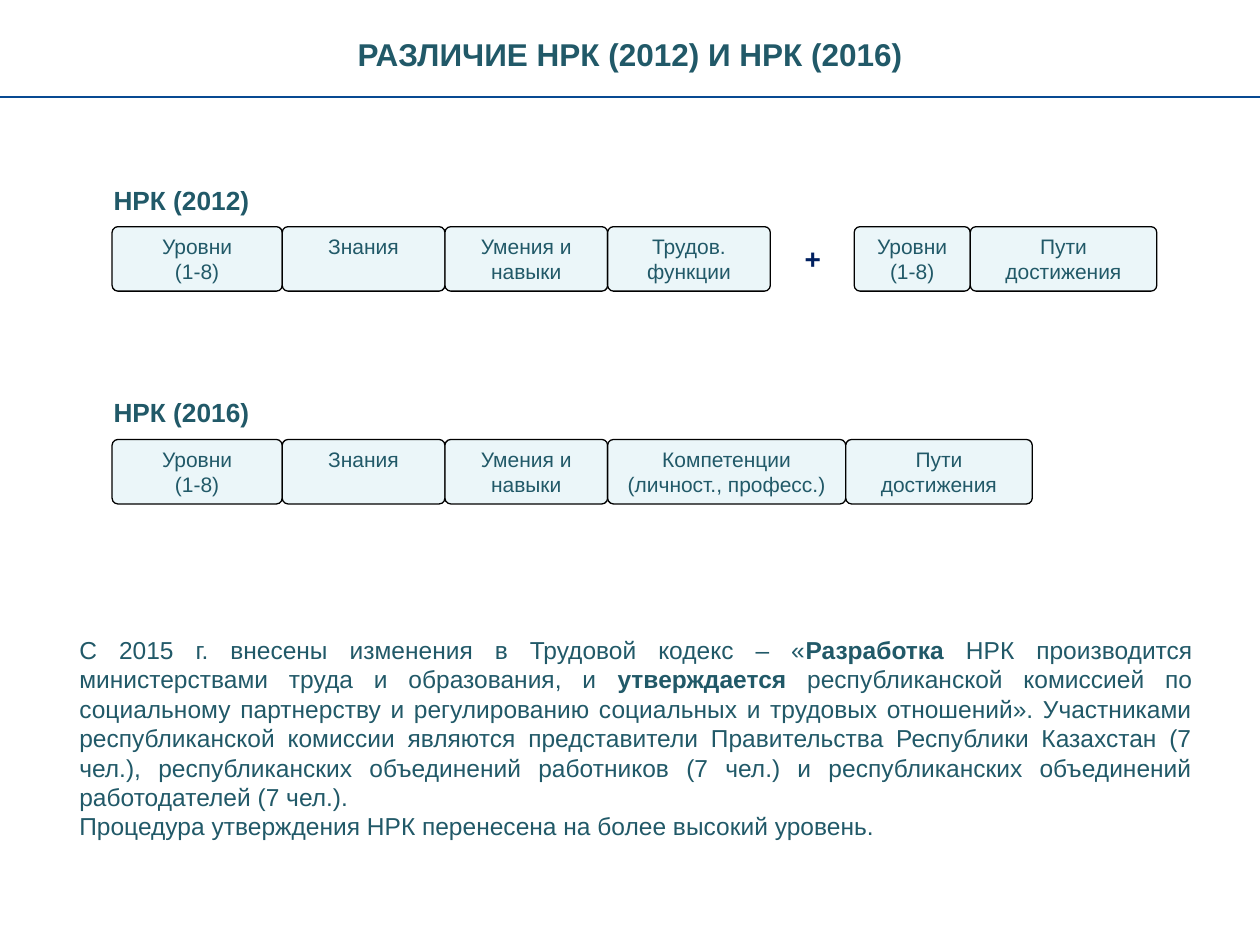
from lxml import etree
from pptx import Presentation
from pptx.dml.color import RGBColor
from pptx.enum.shapes import MSO_CONNECTOR, MSO_SHAPE
from pptx.enum.text import MSO_ANCHOR, PP_ALIGN
from pptx.oxml.ns import qn
from pptx.util import Cm, Pt

TEAL = RGBColor(0x21, 0x59, 0x68)
NAVY = RGBColor(0x00, 0x20, 0x60)
BLUE = RGBColor(0x08, 0x4A, 0x92)
PALE = RGBColor(0xEB, 0xF6, 0xF9)
BLACK = RGBColor(0, 0, 0)
LEFT, CENTER, JUSTIFY = PP_ALIGN.LEFT, PP_ALIGN.CENTER, PP_ALIGN.JUSTIFY
TOP, MIDDLE = MSO_ANCHOR.TOP, MSO_ANCHOR.MIDDLE
ROUNDED = MSO_SHAPE.ROUNDED_RECTANGLE
STRAIGHT = MSO_CONNECTOR.STRAIGHT

SLIDE_WIDTH, SLIDE_HEIGHT = 25.4, 19.05
BOX_HEIGHT = 1.3
ROW_LEFT, EXTRA_LEFT = 2.26, 17.22
LEVELS, KNOWLEDGE, SKILLS = "Уровни\n(1-8)", "Знания", "Умения и навыки"
WAYS = "Пути\nдостижения"
COMMON_BOXES = [(LEVELS, 3.43), (KNOWLEDGE, 3.28), (SKILLS, 3.28)]
BOXES_2012 = COMMON_BOXES + [("Трудов.\nфункции", 3.28)]
EXTRA_2012 = [(LEVELS, 2.34), (WAYS, 3.76)]
BOXES_2016 = COMMON_BOXES + [("Компетенции\n(личност., професс.)", 4.8), (WAYS, 3.76)]

# Each paragraph is a list of (text, bold) runs
BODY = [
    [
        ("С 2015 г. внесены изменения в Трудовой кодекс – «", False),
        ("Разработка ", True),
        ("НРК производится министерствами труда и образования, и ", False),
        ("утверждается", True),
        (" республиканской комиссией по социальному партнерству и регулированию "
         "социальных и трудовых отношений». Участниками республиканской комиссии "
         "являются представители Правительства Республики Казахстан (7 чел.), "
         "республиканских объединений работников (7 чел.) и республиканских "
         "объединений работодателей (7 чел.).", False),
    ],
    [("Процедура утверждения НРК перенесена на более высокий уровень.", False)],
]


class SlideBuilder:
    def __init__(self, slide, font="Arial", color=TEAL):
        self.slide, self.font, self.color = slide, font, color

    def fill_text(self, shape, paragraphs, size, align, anchor, margins, color=None):
        """Write lists of (text, bold) runs into a shape; margins are (sides, top and bottom)."""
        frame = shape.text_frame
        frame.word_wrap = True
        frame.vertical_anchor = anchor
        frame.margin_left = frame.margin_right = Cm(margins[0])
        frame.margin_top = frame.margin_bottom = Cm(margins[1])
        for index, runs in enumerate(paragraphs):
            paragraph = frame.add_paragraph() if index else frame.paragraphs[0]
            paragraph.alignment = align
            for text, bold in runs:
                run = paragraph.add_run()
                run.text = text
                run.font.name, run.font.size, run.font.bold = self.font, Pt(size), bold
                run.font.color.rgb = color or self.color

    def text(self, left, top, width, height, paragraphs, size, align=LEFT,
             anchor=MIDDLE, margins=(0, 0), color=None):
        box = self.slide.shapes.add_textbox(Cm(left), Cm(top), Cm(width), Cm(height))
        self.fill_text(box, paragraphs, size, align, anchor, margins, color)

    def box(self, left, top, width, text):
        shape = self.slide.shapes.add_shape(ROUNDED, Cm(left), Cm(top), Cm(width), Cm(BOX_HEIGHT))
        shape.shadow.inherit = False
        shape.adjustments[0] = 0.09
        shape.fill.solid()
        shape.fill.fore_color.rgb = PALE
        shape.line.color.rgb = BLACK
        shape.line.width = Pt(0.75)
        paragraphs = [[(line, False)] for line in text.split("\n")]
        self.fill_text(shape, paragraphs, 12, CENTER, TOP, (0.1, 0.1))

    def row(self, left, top, boxes):
        """Place boxes side by side without gaps."""
        for text, width in boxes:
            self.box(left, top, width, text)
            left += width

    def heading(self, row_top, text):
        self.text(2.29, row_top - 0.89, 3.05, 0.69, [[(text, True)]], 15)

    def rule(self, top):
        line = self.slide.shapes.add_connector(STRAIGHT, 0, Cm(top), Cm(SLIDE_WIDTH), Cm(top))
        line.line.color.rgb = BLUE
        line.line.width = Pt(1)
        etree.SubElement(line._element.spPr, qn("a:effectLst"))


def main():
    presentation = Presentation()
    presentation.slide_width, presentation.slide_height = Cm(SLIDE_WIDTH), Cm(SLIDE_HEIGHT)
    slide = presentation.slides.add_slide(presentation.slide_layouts[6])
    builder = SlideBuilder(slide)

    builder.text(0, 0.58, SLIDE_WIDTH, 1.02, [[("РАЗЛИЧИЕ НРК (2012) И НРК (2016)", True)]],
                 18, CENTER, TOP, (0.25, 0.13))
    builder.rule(1.96)

    top_2012, top_2016 = 4.57, 8.86
    builder.heading(top_2012, "НРК (2012)")
    builder.row(ROW_LEFT, top_2012, BOXES_2012)
    builder.text(15.9, top_2012 + 0.25, 0.97, 0.79, [[("+", True)]], 16, CENTER, color=NAVY)
    builder.row(EXTRA_LEFT, top_2012, EXTRA_2012)

    builder.heading(top_2016, "НРК (2016)")
    builder.row(ROW_LEFT, top_2016, BOXES_2016)

    builder.text(1.35, 12.67, 22.94, 4.45, BODY, 14, JUSTIFY, TOP, (0.25, 0.13))
    presentation.save("out.pptx")


if __name__ == "__main__":
    main()
